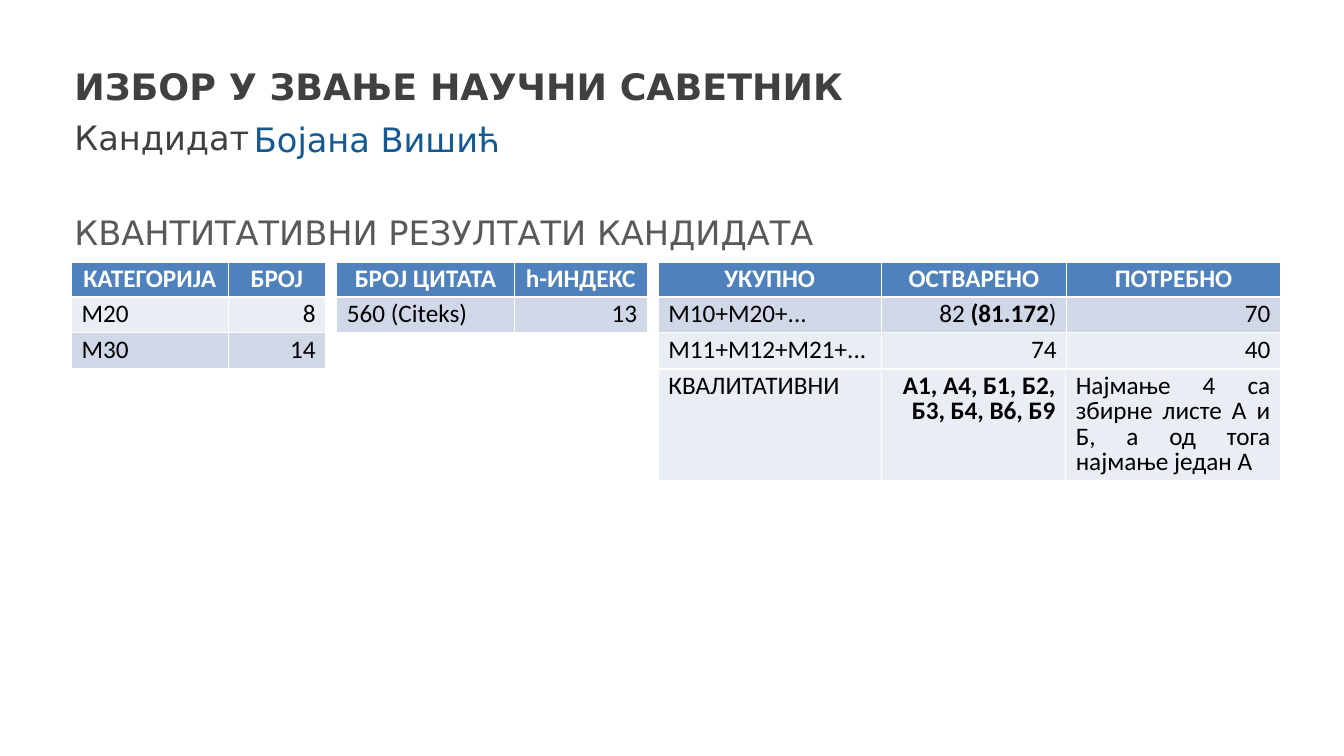
import pptx
import pptx.util
import pptx.dml.color
import pptx.enum.text
import pptx.oxml

PX = 9144  # 100 px to the inch
HUES = {"title": "404040", "topic": "595959", "name": "145991", "white": "FFFFFF",
        "black": "000000", "head": "4F81BD", "dark": "D0D8E8", "light": "E9EDF4"}
ALIGN = pptx.enum.text.PP_ALIGN
ANCHOR = pptx.enum.text.MSO_ANCHOR
SIDES = {"c": ALIGN.CENTER, "l": ALIGN.LEFT, "r": ALIGN.RIGHT, "j": ALIGN.JUSTIFY}
NS = "http://schemas.openxmlformats.org/drawingml/2006/main"


def add_run(para, text, hue, **form):
    run = para.add_run()
    run.text = text
    for key, value in form.items():
        setattr(run.font, key, value)
    run.font.color.rgb = pptx.dml.color.RGBColor.from_string(HUES[hue])


def add_edge(cell, tag, width):
    """Draw one white border of a cell, its width in points."""
    cell._tc.get_or_add_tcPr().append(pptx.oxml.parse_xml(
        f'<a:{tag} xmlns:a="{NS}" w="{int(width * 12700)}"><a:solidFill>'
        f'<a:srgbClr val="{HUES["white"]}"/></a:solidFill></a:{tag}>'))


deck = pptx.Presentation()
deck.slide_width, deck.slide_height = 1333 * PX, 750 * PX
slide = deck.slides.add_slide(deck.slide_layouts[6])

# Headings: place, anchor, line spacing, text, hue, size, bold
heads = [
    ((64, 111, 1206, 50), ANCHOR.TOP, 1.0, "Кандидат", "title", 24, False),
    ((64, 197, 1206, 58), ANCHOR.BOTTOM, 1.0,
     "КВАНТИТАТИВНИ РЕЗУЛТАТИ КАНДИДАТА", "topic", 24, False),
    ((64, 54, 1206, 58), ANCHOR.BOTTOM, 1.0,
     "ИЗБОР У ЗВАЊЕ НАУЧНИ САВЕТНИК", "title", 26, True),
    ((242, 112, 675, 48), ANCHOR.MIDDLE, 1.1, "Бојана Вишић", "name", 24, False),
]
for place, anchor, space, text, hue, size, bold in heads:
    frame = slide.shapes.add_textbox(*[n * PX for n in place]).text_frame
    frame.word_wrap = True
    frame.vertical_anchor = anchor
    para = frame.paragraphs[0]
    para.line_spacing = space
    add_run(para, text, hue, name="DejaVu Sans", size=pptx.util.Pt(size), bold=bold)

# Tables: left, top, row height, anchor, column widths, then rows of
# (fill, column alignment, cells); text between asterisks is bold
tables = [
    (653, 260, 35, ANCHOR.TOP, (221, 184, 212), [
        ("head", "ccc", ["*УКУПНО*", "*ОСТВАРЕНО*", "*ПОТРЕБНО*"]),
        ("dark", "lrr", ["М10+М20+...", "82* (81.172*)", "70"]),
        ("light", "lrr", ["М11+М12+М21+...", "74", "40"])]),
    (71, 260, 35, ANCHOR.MIDDLE, (155, 97), [
        ("head", "cc", ["*КАТЕГОРИЈА*", "*БРОЈ*"]),
        ("light", "lr", ["М20", "8"]),
        ("dark", "lr", ["М30", "14"])]),
    (334, 260, 35, ANCHOR.MIDDLE, (176, 132), [
        ("head", "cc", ["*БРОЈ ЦИТАТА*", "*h-ИНДЕКС*"]),
        ("dark", "lr", ["560 (Citeks)", "13"])]),
    (653, 366, 110, ANCHOR.TOP, (221, 183, 213), [
        ("light", "lrj", ["КВАЛИТАТИВНИ", "*А1, A4, Б1, Б2, Б3, Б4, B6, Б9*",
                          "Најмање 4 са збирне листе А и Б, а од тога најмање један А"])]),
]
for left, top, high, anchor, cols, rows in tables:
    grid = slide.shapes.add_table(
        len(rows), len(cols), left * PX, top * PX,
        sum(cols) * PX, high * len(rows) * PX).table
    grid.first_row = grid.horz_banding = False
    for col, wide in zip(grid.columns, cols):
        col.width = wide * PX
    for i, (fill, sides, texts) in enumerate(rows):
        grid.rows[i].height = high * PX
        is_head = fill == "head"
        below = i > 0 and rows[i - 1][0] == "head"
        for j, (side, text) in enumerate(zip(sides, texts)):
            cell = grid.cell(i, j)
            cell.vertical_anchor = anchor
            for tag, thick in (("lnL", False), ("lnR", False),
                               ("lnT", below), ("lnB", is_head)):
                add_edge(cell, tag, 1.47 if thick else 0.45)
            cell.fill.solid()
            cell.fill.fore_color.rgb = pptx.dml.color.RGBColor.from_string(HUES[fill])
            para = cell.text_frame.paragraphs[0]
            para.alignment = SIDES[side]
            para.line_spacing = 0.83
            for k, part in enumerate(text.split("*")):
                if part:
                    add_run(para, part, "white" if is_head else "black",
                            name="Calibri", size=pptx.util.Pt(18), bold=k % 2 == 1)

deck.save("out.pptx")
